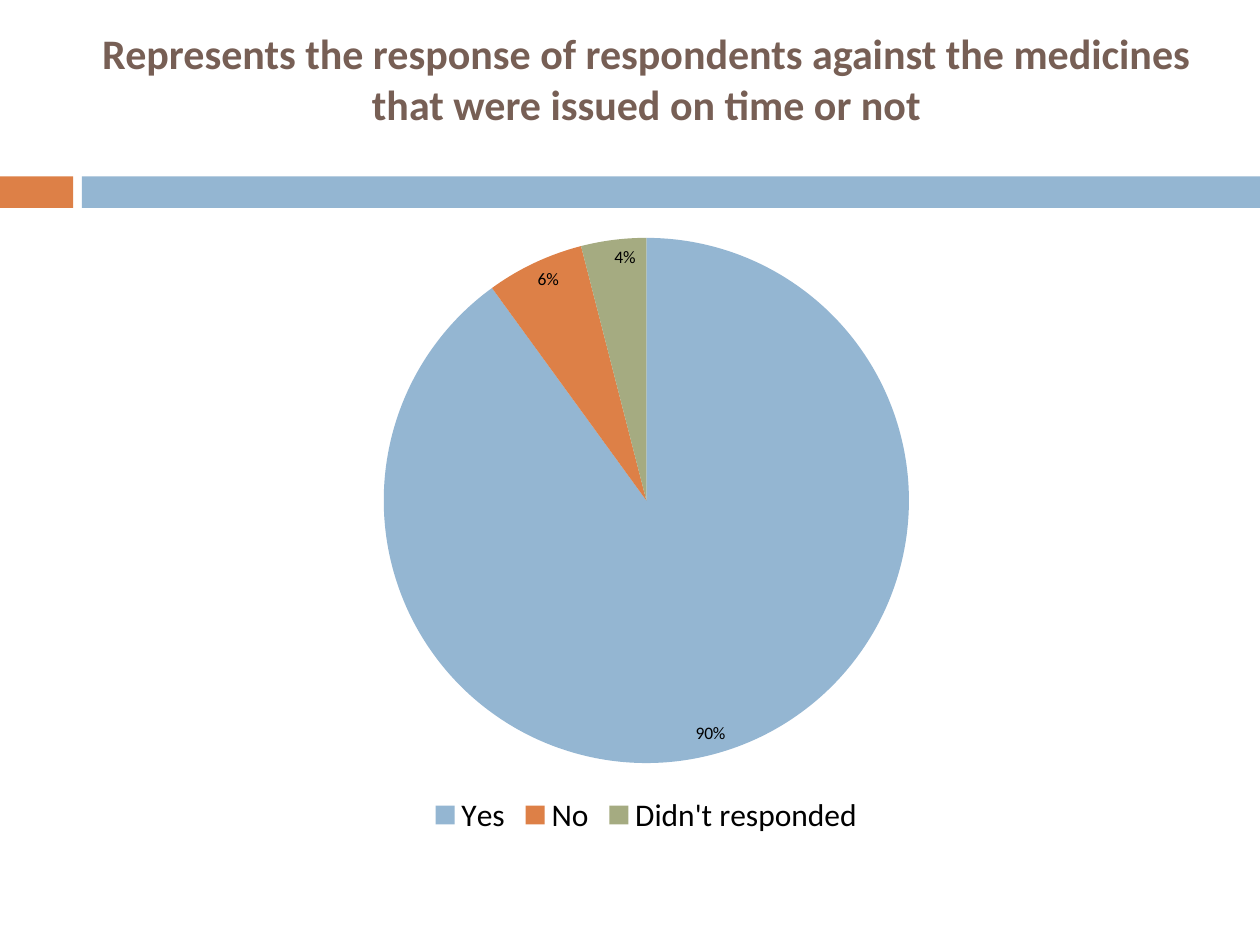
from pptx import Presentation
from pptx.chart.data import CategoryChartData
from pptx.dml.color import RGBColor
from pptx.enum.chart import XL_CHART_TYPE, XL_LABEL_POSITION, XL_LEGEND_POSITION
from pptx.enum.shapes import MSO_SHAPE
from pptx.enum.text import MSO_ANCHOR, PP_ALIGN
from pptx.util import Inches, Pt

BLUE = RGBColor(0x94, 0xB6, 0xD2)
ORANGE = RGBColor(0xDD, 0x80, 0x47)
GREEN = RGBColor(0xA5, 0xAB, 0x81)
BROWN = RGBColor(0x77, 0x5F, 0x55)
BLACK = RGBColor(0, 0, 0)

WIDE, HIGH = 10, 7.5
LEFT, SPAN = 0.67, 8.92
BAND, DEPTH = 1.4, 0.25
SPLIT, GAP = 0.58, 0.07


class Deck:
    face = "Calibri"

    def __init__(self):
        self.show = Presentation()
        self.show.slide_width = Inches(WIDE)
        self.show.slide_height = Inches(HIGH)
        self.slide = self.show.slides.add_slide(self.show.slide_layouts[6])

    def font(self, font, size, color, bold=False):
        font.name = self.face
        font.size = Pt(size)
        font.color.rgb = color
        font.bold = bold

    def bar(self, left, width, color):
        box = map(Inches, (left, BAND, width, DEPTH))
        shape = self.slide.shapes.add_shape(MSO_SHAPE.RECTANGLE, *box)
        shape.shadow.inherit = False
        shape.fill.solid()
        shape.fill.fore_color.rgb = color
        shape.line.fill.background()

    def title(self, text, top, height):
        box = map(Inches, (LEFT, top, SPAN, height))
        frame = self.slide.shapes.add_textbox(*box).text_frame
        frame.word_wrap = True
        frame.vertical_anchor = MSO_ANCHOR.MIDDLE
        frame.margin_top = 0
        frame.margin_bottom = Inches(0.34)
        line = frame.paragraphs[0]
        line.text = text
        line.alignment = PP_ALIGN.CENTER
        self.font(line.font, 24, BROWN, True)

    def pie(self, parts, top, height):
        data = CategoryChartData()
        data.categories = [name for name, _, _ in parts]
        data.add_series("Series 1", [value for _, value, _ in parts])
        box = map(Inches, (LEFT, top, SPAN, height))
        chart = self.slide.shapes.add_chart(XL_CHART_TYPE.PIE, *box, data).chart
        self.font(chart.font, 10, BLACK)
        chart.has_title = False
        chart.has_legend = True
        chart.legend.position = XL_LEGEND_POSITION.BOTTOM
        chart.legend.include_in_layout = False
        self.font(chart.legend.font, 18, BLACK)

        plot = chart.plots[0]
        plot.vary_by_categories = True
        plot.has_data_labels = True
        labels = plot.data_labels
        labels.show_percentage = True
        labels.show_value = False
        labels.number_format = "0%"
        labels.number_format_is_linked = False
        labels.position = XL_LABEL_POSITION.INSIDE_END
        self.font(labels.font, 10, BLACK)
        for spot, (_, _, color) in enumerate(parts):
            fill = plot.series[0].points[spot].format.fill
            fill.solid()
            fill.fore_color.rgb = color

    def save(self):
        self.show.save("out.pptx")


def main():
    deck = Deck()
    deck.bar(0, SPLIT, ORANGE)
    deck.bar(SPLIT + GAP, WIDE - SPLIT - GAP, BLUE)
    deck.title(
        "Represents the response of respondents against the medicines "
        "that were issued on time or not", 0.25, 1.08)
    parts = [("Yes", 90, BLUE), ("No", 6, ORANGE), ("Didn't responded", 4, GREEN)]
    deck.pie(parts, 1.75, 4.92)
    deck.save()


if __name__ == "__main__":
    main()
